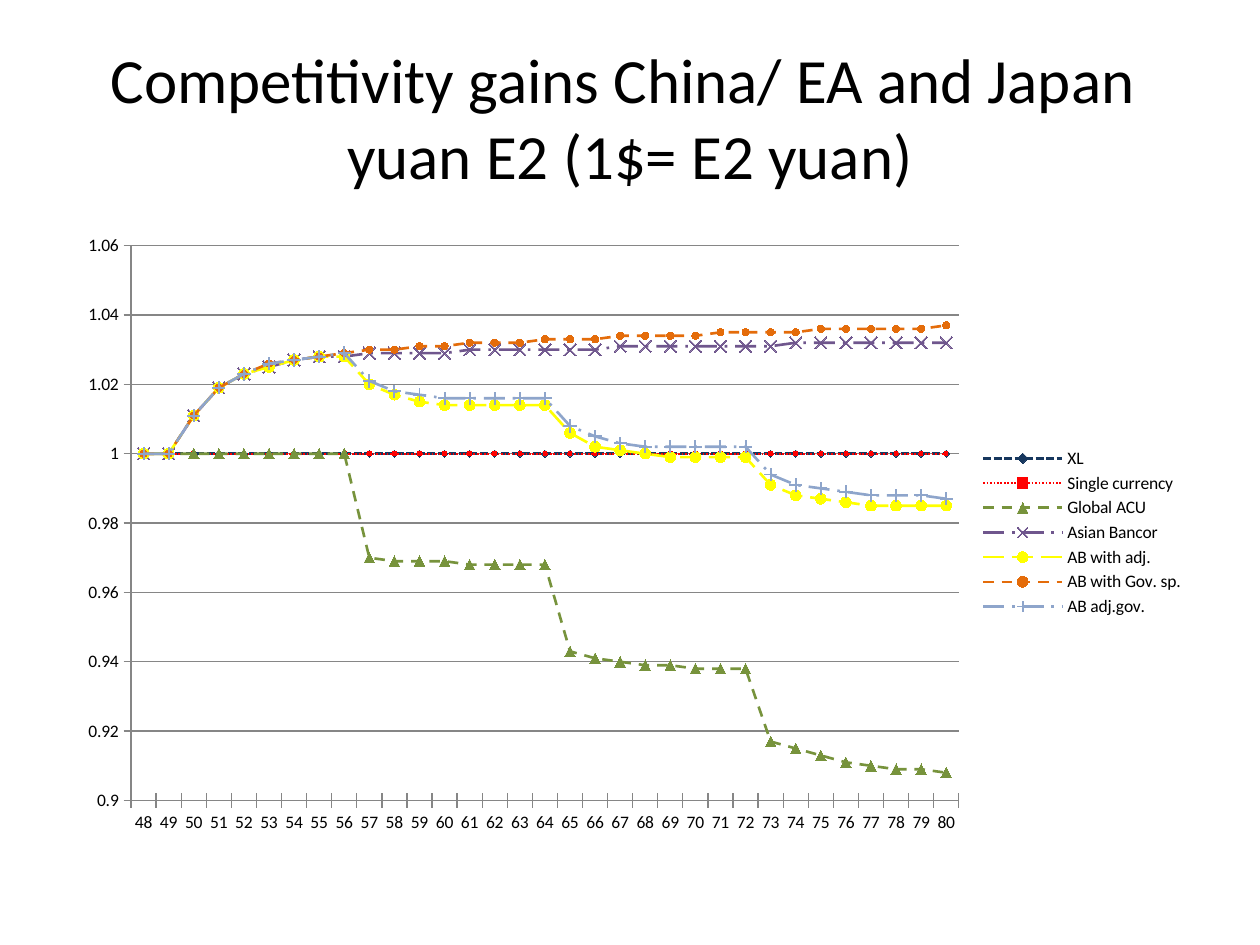
from dataclasses import dataclass

from lxml.etree import SubElement
from pptx import Presentation
from pptx.chart.data import CategoryChartData
from pptx.dml.color import RGBColor
from pptx.enum.chart import XL_CHART_TYPE as ChartType
from pptx.enum.chart import XL_LEGEND_POSITION as LegendPosition
from pptx.enum.chart import XL_MARKER_STYLE as Marker
from pptx.enum.chart import XL_TICK_MARK as TickMark
from pptx.enum.dml import MSO_LINE as Dash
from pptx.enum.text import MSO_ANCHOR as Anchor
from pptx.enum.text import MSO_AUTO_SIZE as AutoSize
from pptx.enum.text import PP_ALIGN as Align
from pptx.oxml.ns import qn
from pptx.util import Cm, Pt


@dataclass(frozen=True)
class Theme:
    """Colours, font and type sizes of the slide."""
    font: str = "Calibri"
    title_size: int = 36
    chart_size: int = 10
    text: str = "000000"
    axis: str = "868686"
    baseline: str = "17375E"
    single: str = "FF0000"
    global_acu: str = "77933C"
    bancor: str = "6F568D"
    adjusted: str = "FFFF00"
    government: str = "E46C0A"
    combined: str = "8EA5CB"


THEME = Theme()
TITLE = "Competitivity gains China/ EA and Japan \vyuan E2 (1$= E2 yuan)"
PERIODS = range(48, 81)
FLAT = [1] * len(PERIODS)
RISE = [1, 1, 1.011, 1.019, 1.023]
GLOBAL_ACU = [1] * 9 + [
    0.97, 0.969, 0.969, 0.969, 0.968, 0.968, 0.968, 0.968,
    0.943, 0.941, 0.94, 0.939, 0.939, 0.938, 0.938, 0.938,
    0.917, 0.915, 0.913, 0.911, 0.91, 0.909, 0.909, 0.908]
BANCOR = RISE + [1.025, 1.027, 1.028, 1.028] + (
    [1.029] * 4 + [1.03] * 6 + [1.031] * 7 + [1.032] * 7)
ADJUSTED = RISE + [
    1.025, 1.027, 1.028, 1.028,
    1.02, 1.017, 1.015, 1.014, 1.014, 1.014, 1.014, 1.014,
    1.006, 1.002, 1.001, 1, 0.999, 0.999, 0.999, 0.999,
    0.991, 0.988, 0.987, 0.986, 0.985, 0.985, 0.985, 0.985]
GOVERNMENT = RISE + [1.026, 1.027, 1.028, 1.029] + (
    [1.03] * 2 + [1.031] * 2 + [1.032] * 3 + [1.033] * 3
    + [1.034] * 4 + [1.035] * 4 + [1.036] * 5 + [1.037])
COMBINED = RISE + [
    1.026, 1.027, 1.028, 1.029,
    1.021, 1.018, 1.017, 1.016, 1.016, 1.016, 1.016, 1.016,
    1.008, 1.005, 1.003, 1.002, 1.002, 1.002, 1.002, 1.002,
    0.994, 0.991, 0.99, 0.989, 0.988, 0.988, 0.988, 0.987]
SERIES = [
    ("XL", FLAT, THEME.baseline, 1.5, Dash.SQUARE_DOT, Marker.DIAMOND, 4),
    ("Single currency", FLAT, THEME.single, 1, Dash.ROUND_DOT, Marker.SQUARE, 2),
    ("Global ACU", GLOBAL_ACU, THEME.global_acu, 1.5, Dash.DASH, Marker.TRIANGLE, 6),
    ("Asian Bancor", BANCOR, THEME.bancor, 1.5, Dash.LONG_DASH_DOT, Marker.X, 7),
    ("AB with adj.", ADJUSTED, THEME.adjusted, 1.5, Dash.LONG_DASH, Marker.CIRCLE, 6),
    ("AB with Gov. sp.", GOVERNMENT, THEME.government, 1.5, Dash.DASH, Marker.CIRCLE, 4),
    ("AB adj.gov.", COMBINED, THEME.combined, 1.5, Dash.LONG_DASH_DOT, Marker.PLUS, 7),
]


def apply_format(target, **values):
    """Set each named attribute on the target."""
    for name, value in values.items():
        setattr(target, name, value)


def format_font(font, size):
    """Give a font the theme's face and text colour."""
    apply_format(font, name=THEME.font, size=Pt(size))
    font.color.rgb = RGBColor.from_string(THEME.text)


def format_line(line, color, width):
    """Give a line a solid colour and a width in points."""
    line.color.rgb = RGBColor.from_string(color)
    line.width = Pt(width)


def place_title(slide, left, top, width, height):
    """Place and format the title placeholder in its box."""
    title = slide.shapes.title
    apply_format(title, left=left, top=top, width=width, height=height)
    frame = title.text_frame
    frame.text = TITLE
    apply_format(frame, vertical_anchor=Anchor.MIDDLE, word_wrap=True,
                 auto_size=AutoSize.NONE)
    paragraph = frame.paragraphs[0]
    paragraph.alignment = Align.CENTER
    for run in paragraph.runs:
        format_font(run.font, THEME.title_size)


def set_plot_layout(chart, **fractions):
    """Fix the inner plot area as fractions of the chart."""
    plot_area = chart._chartSpace.chart.plotArea
    for old in plot_area.findall(qn("c:layout")):
        plot_area.remove(old)
    layout = plot_area.makeelement(qn("c:layout"))
    plot_area.insert(0, layout)
    manual = SubElement(layout, qn("c:manualLayout"))
    values = {"layoutTarget": "inner", "xMode": "edge", "yMode": "edge", **fractions}
    for name, value in values.items():
        SubElement(manual, qn(f"c:{name}")).set("val", str(value))


def format_axes(chart):
    """Set the scale, tick marks and gridlines of both axes."""
    for axis in (chart.category_axis, chart.value_axis):
        apply_format(axis, major_tick_mark=TickMark.CROSS,
                     minor_tick_mark=TickMark.NONE)
        format_line(axis.format.line, THEME.axis, 0.75)
    value_axis = chart.value_axis
    apply_format(value_axis, minimum_scale=0.9, maximum_scale=1.06,
                 major_unit=0.02, has_major_gridlines=True)
    format_line(value_axis.major_gridlines.format.line, THEME.axis, 0.75)


def format_series(series, color, width, dash, marker, size):
    """Style the line and the markers of one series."""
    series.smooth = False
    format_line(series.format.line, color, width)
    series.format.line.dash_style = dash
    apply_format(series.marker, style=marker, size=size)
    fill = series.marker.format.fill
    fill.solid()
    fill.fore_color.rgb = RGBColor.from_string(color)
    format_line(series.marker.format.line, color, 0.75)


def place_chart(slide, left, top, width, height):
    """Draw the line chart with its legend in its box."""
    data = CategoryChartData()
    data.categories = [str(period) for period in PERIODS]
    for name, values, *_ in SERIES:
        data.add_series(name, values)
    chart = slide.shapes.add_chart(
        ChartType.LINE_MARKERS, left, top, width, height, data).chart
    apply_format(chart, has_title=False, has_legend=True)
    apply_format(chart.legend, position=LegendPosition.RIGHT, include_in_layout=False)
    format_font(chart.font, THEME.chart_size)
    chart.plots[0].vary_by_categories = False
    format_axes(chart)
    set_plot_layout(chart, x=0.06, y=0.04, w=0.73, h=0.89)
    for series, (_, _, *style) in zip(chart.plots[0].series, SERIES):
        format_series(series, *style)


def main():
    """Build the slide and save it."""
    presentation = Presentation()
    apply_format(presentation, slide_width=Cm(25.4), slide_height=Cm(19.05))
    slide = presentation.slides.add_slide(presentation.slide_layouts[5])
    place_title(slide, Cm(1.27), Cm(0.76), Cm(22.86), Cm(3.18))
    place_chart(slide, Cm(1.27), Cm(4.45), Cm(22.86), Cm(12.57))
    presentation.save("out.pptx")


if __name__ == "__main__":
    main()
